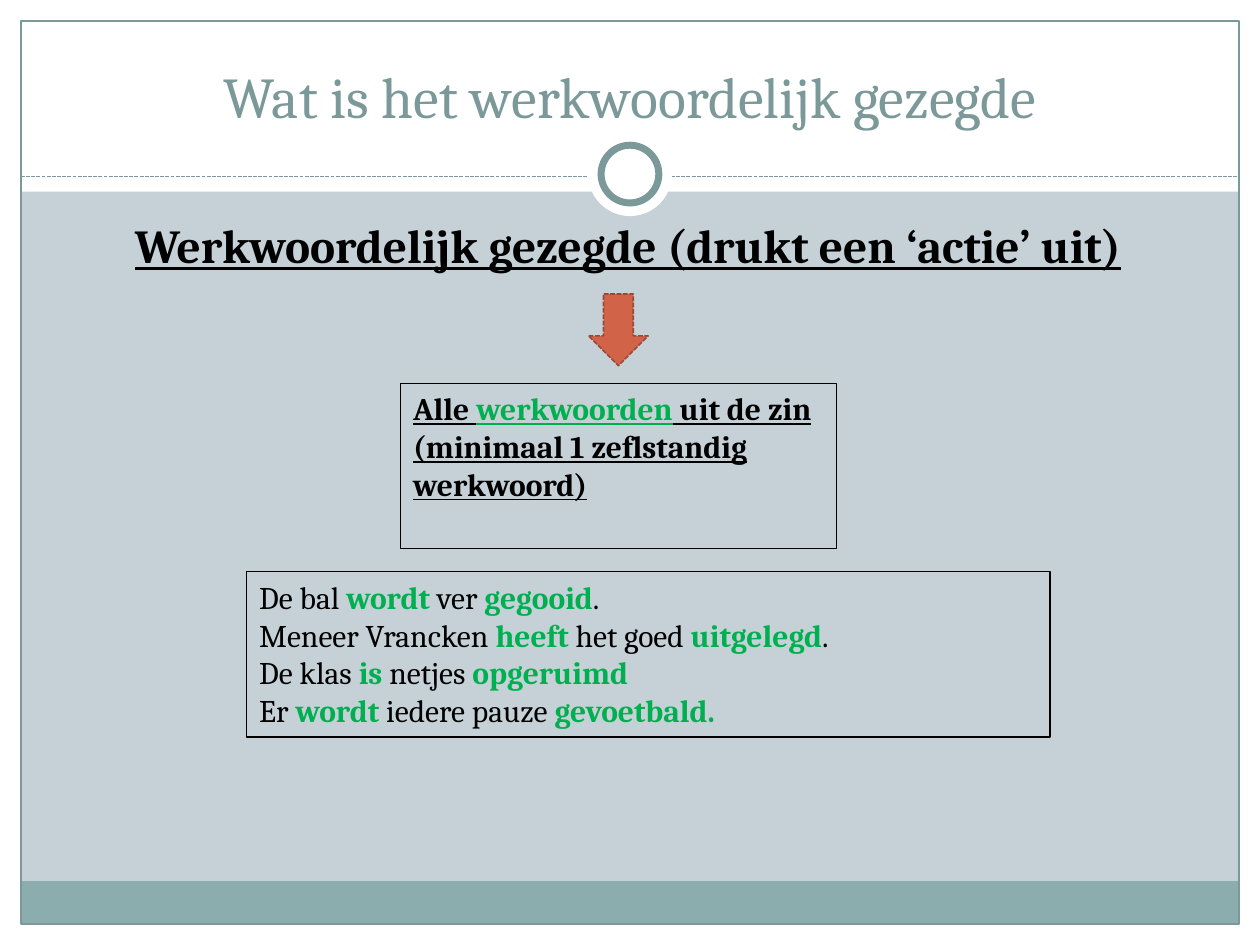
from lxml.etree import SubElement
from pptx import Presentation
from pptx.dml.color import RGBColor
from pptx.enum.dml import MSO_LINE
from pptx.enum.shapes import MSO_CONNECTOR, MSO_SHAPE
from pptx.enum.text import MSO_ANCHOR as Anchor, PP_ALIGN as Align
from pptx.oxml.ns import qn
from pptx.util import Pt

# Content: words between asterisks are the highlighted verbs
TITLE = "Wat is het werkwoordelijk gezegde"
HEADING = "Werkwoordelijk gezegde (drukt een ‘actie’ uit)"
RULE = ["Alle *werkwoorden* uit de zin", "(minimaal 1 zeflstandig werkwoord)"]
EXAMPLES = [
    "De bal *wordt* ver *gegooid*.",
    "Meneer Vrancken *heeft* het goed *uitgelegd*.",
    "De klas *is* netjes *opgeruimd*",
    "Er *wordt* iedere pauze *gevoetbald.*",
]

THEME = dict(font="Cambria", title_size=33, heading_size=27, body_size=18,
             back="C5D1D7", paper="FFFFFF", frame="7C999A", footer="8CADAE",
             arrow="D16349", arrow_edge="9B4936", ink="000000", verb="00B050")

WIDTH, HEIGHT, MARGIN = 720, 540, 12
HEADER_HEIGHT, DIVIDER_Y, FOOTER_HEIGHT = 109.5, 100.8, 24.5


def color(name):
    return RGBColor.from_string(THEME[name])


def set_line(line, name, width, dash=None):
    line.color.rgb = color(name)
    line.width = Pt(width)
    if dash:
        line.dash_style = dash


def add_shape(kind, box, fill=None, edge=None, width=0.75, dash=None):
    shape = slide.shapes.add_shape(kind, *map(Pt, box))
    shape.shadow.inherit = False
    if fill:
        shape.fill.solid()
        shape.fill.fore_color.rgb = color(fill)
    else:
        shape.fill.background()
    if edge:
        set_line(shape.line, edge, width, dash)
    else:
        shape.line.fill.background()
    return shape


def write(shape, lines, size, ink="ink", bold=False, underline=False,
          align=Align.LEFT, anchor=Anchor.TOP, before=0):
    frame = shape.text_frame
    frame.word_wrap = True
    frame.vertical_anchor = anchor
    for number, line in enumerate(lines):
        paragraph = frame.add_paragraph() if number else frame.paragraphs[0]
        paragraph.alignment = align
        paragraph.space_before = Pt(before)
        for part, words in enumerate(line.split("*")):
            if not words:
                continue
            is_verb = part % 2 == 1
            run = paragraph.add_run()
            run.text = words
            font = run.font
            font.name, font.size = THEME["font"], Pt(THEME[size])
            font.bold, font.underline = bold or is_verb, underline
            font.color.rgb = color("verb" if is_verb else ink)


prs = Presentation()
prs.slide_width, prs.slide_height = Pt(WIDTH), Pt(HEIGHT)
slide = prs.slides.add_slide(prs.slide_layouts[6])
slide.background.fill.solid()
slide.background.fill.fore_color.rgb = color("back")

# White header and margins, footer band, frame
inner = WIDTH - 2 * MARGIN
bottom = HEIGHT - MARGIN
for box in [(0, bottom, WIDTH, MARGIN), (0, 0, WIDTH, HEADER_HEIGHT),
            (0, 0, MARGIN, HEIGHT), (WIDTH - MARGIN, 0, MARGIN, HEIGHT)]:
    add_shape(MSO_SHAPE.RECTANGLE, box, "paper")
add_shape(MSO_SHAPE.RECTANGLE,
          (MARGIN, bottom - FOOTER_HEIGHT, inner, FOOTER_HEIGHT), "footer")
add_shape(MSO_SHAPE.RECTANGLE, (MARGIN, MARGIN, inner, bottom - MARGIN), edge="frame")

# Dashed divider with the ring on it
divider = slide.shapes.add_connector(
    MSO_CONNECTOR.STRAIGHT, Pt(MARGIN), Pt(DIVIDER_Y), Pt(WIDTH - MARGIN), Pt(DIVIDER_Y))
set_line(divider.line, "frame", 0.75, MSO_LINE.SQUARE_DOT)
SubElement(divider.element.spPr, qn("a:effectLst"))
ring_y = 99.5
for diameter, edge in [(48, None), (33, "frame")]:
    add_shape(MSO_SHAPE.OVAL, (WIDTH / 2 - diameter / 2, ring_y - diameter / 2,
                               diameter, diameter), "paper", edge, 4)

# Title and heading
title = slide.shapes.add_textbox(Pt(24), Pt(18), Pt(672), Pt(60))
write(title, [TITLE], "title_size", "frame", align=Align.CENTER, anchor=Anchor.BOTTOM)
heading = slide.shapes.add_textbox(Pt(24), Pt(120), Pt(669.5), Pt(360))
write(heading, [HEADING], "heading_size", bold=True, underline=True,
      align=Align.CENTER, before=5.4)

# Arrow down to the rule, then the example sentences
add_shape(MSO_SHAPE.DOWN_ARROW, (336.4, 168, 34, 41), "arrow", "arrow_edge", 0.9,
          MSO_LINE.SQUARE_DOT)
rule = add_shape(MSO_SHAPE.RECTANGLE, (229, 219, 249, 94.5), edge="ink")
write(rule, RULE, "body_size", bold=True, underline=True)
examples = add_shape(MSO_SHAPE.RECTANGLE, (141, 326.7, 459, 94.5), edge="ink")
write(examples, EXAMPLES, "body_size")

prs.save("out.pptx")
